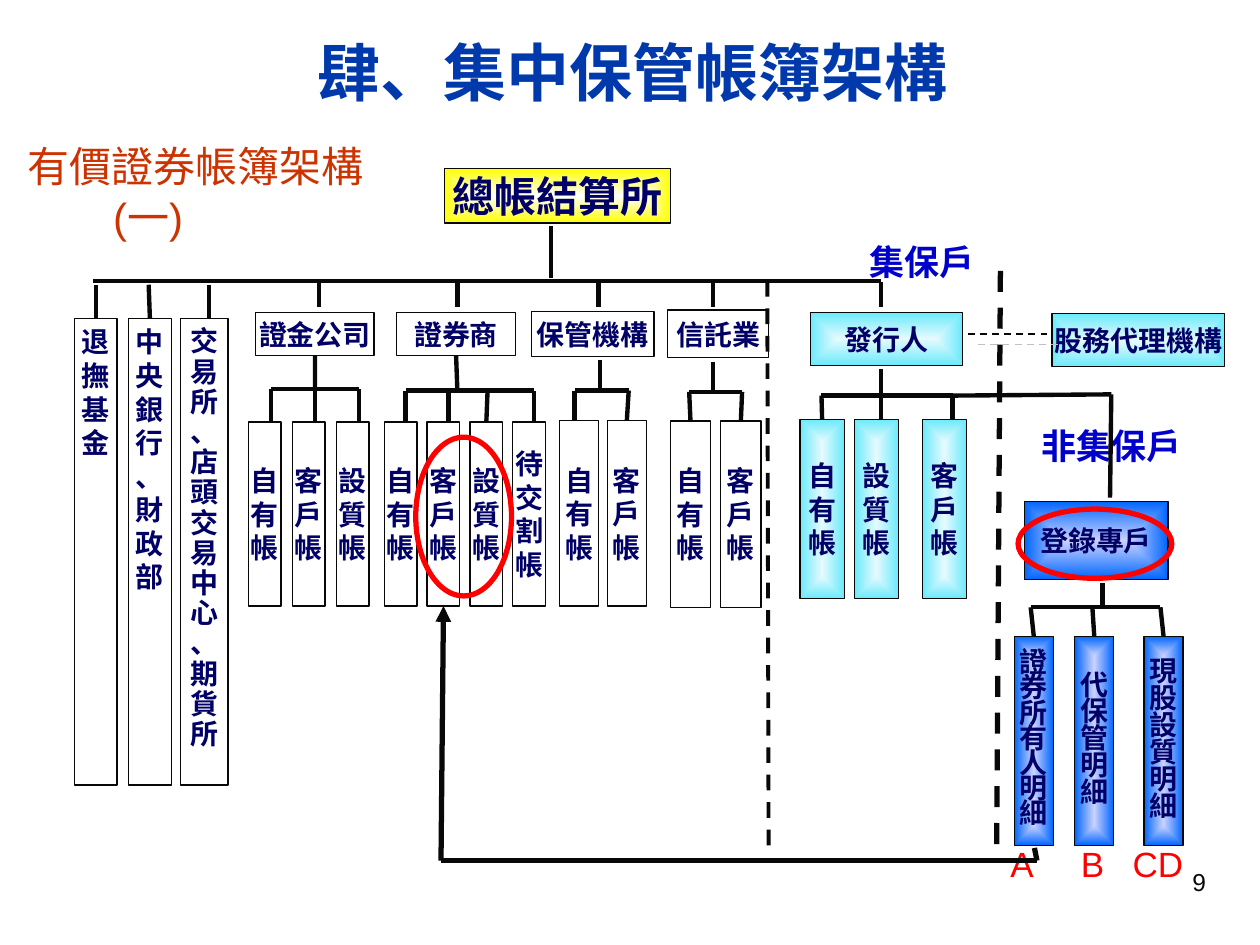
"""Build the central custody account structure slide."""
from dataclasses import dataclass

from lxml import etree
from pptx import Presentation
from pptx import util as u
from pptx.dml.color import RGBColor
from pptx.enum import dml, shapes, text
from pptx.oxml import parse_xml
from pptx.oxml.ns import nsdecls, qn


@dataclass(frozen=True)
class Theme:
    """Colours, fonts and type sizes of the slide."""
    ink: str = "080808"
    navy: str = "000066"
    blue: str = "0000CC"
    title: str = "0039AC"
    rust: str = "CC3300"
    red: str = "FF0000"
    gold: tuple = ("FFFFFF", "FFFF00")
    aqua: tuple = ("E5FAFE", "6BEAFB")
    deep: tuple = ("CAD2FF", "0066FF")
    sans: str = "Arial"
    serif: str = "Times New Roman"
    cjk: str = "Noto Sans CJK SC"
    small: int = 14
    body: int = 16
    label: int = 20
    head: int = 24
    top: int = 36


T = Theme()


def rgb(code):
    """Turn a hex code into a colour."""
    return RGBColor.from_string(code)


def style(para, size, color, font, bold=False, align=text.PP_ALIGN.CENTER):
    """Set the font and alignment of a paragraph."""
    para.alignment = align
    para.font.size, para.font.name, para.font.bold = u.Pt(size), font, bold
    para.font.color.rgb = rgb(color)


def glow(shape, pair):
    """Fill a shape with a gradient from its centre to its edges."""
    shape.fill.gradient()
    for stop, code in zip(shape.fill.gradient_stops, pair):
        stop.color.rgb = rgb(code)
    grad = shape._element.spPr.find(qn("a:gradFill"))
    grad.remove(grad.find(qn("a:lin")))
    grad.append(parse_xml(
        f'<a:path {nsdecls("a")} path="shape">'
        '<a:fillToRect l="50000" t="50000" r="50000" b="50000"/></a:path>'))


def outline(slide, kind, area, color, weight):
    """Add an unfilled preset shape."""
    shape = slide.shapes.add_shape(kind, *map(u.Inches, area))
    shape.shadow.inherit = False
    shape.fill.background()
    shape.line.color.rgb, shape.line.width = rgb(color), u.Pt(weight)
    return shape


def box(slide, lines, area, fill=None, size=T.body, space=None,
        anchor=text.MSO_ANCHOR.MIDDLE, foot=0.05):
    """Add a framed box with one paragraph for each line."""
    shape = outline(slide, shapes.MSO_SHAPE.RECTANGLE, area, T.ink, 0.75)
    if fill:
        glow(shape, fill)
    frame = shape.text_frame
    frame.word_wrap, frame.vertical_anchor = False, anchor
    frame.margin_left = frame.margin_right = 0
    frame.margin_bottom = u.Inches(foot)
    frame.text = "\n".join(lines)
    for para in frame.paragraphs:
        style(para, size, T.navy, T.cjk, True)
        para.line_spacing = space
    return shape


def note(slide, words, area, *look, **more):
    """Add a free text box and return its paragraph."""
    frame = slide.shapes.add_textbox(*map(u.Inches, area)).text_frame
    frame.word_wrap, frame.text = True, words
    style(frame.paragraphs[0], *look, **more)
    return frame.paragraphs[0]


def sites(shape):
    """List the middles of a box's sides: top, left, bottom, right."""
    x, y, w, h = shape.left, shape.top, shape.width, shape.height
    return [(x + w // 2, y), (x, y + h // 2), (x + w // 2, y + h), (x + w, y + h // 2)]


def wire(slide, start, end, weight=2.5, dash=False, boxes=()):
    """Draw a line and join its ends to the box sides they meet."""
    line = slide.shapes.add_connector(
        shapes.MSO_CONNECTOR.STRAIGHT, *map(u.Inches, (*start, *end)))
    line.line.color.rgb, line.line.width = rgb(T.ink), u.Pt(weight)
    if dash:
        line.line.dash_style = dml.MSO_LINE.DASH
    etree.SubElement(line._element.spPr, qn("a:effectLst"))
    for point, join in ((start, line.begin_connect), (end, line.end_connect)):
        for shape in boxes:
            for index, site in enumerate(sites(shape)):
                if all(abs(u.Inches(p) - s) <= u.Inches(0.03) for p, s in zip(point, site)):
                    join(shape, index)
    return line


def branch(slide, name, area, stem, bus, lefts, drops, size, kids, fill=None, spaces=None):
    """Draw a parent box, its bus and its upright child boxes."""
    top, width, height = size
    base = area[1] + area[3] + 0.03
    head = box(slide, [name], area, fill)
    wire(slide, (stem, base), (stem, bus), boxes=[head])
    wire(slide, (drops[0], bus), (drops[-1], bus))
    made = []
    for left, drop, kid, space in zip(lefts, drops, kids, spaces or [None] * len(kids)):
        made.append(box(slide, kid, (left, top, width, height), fill, space=space))
        wire(slide, (drop, bus), (drop, top), boxes=made)
    return made


def row(left, step, count):
    """Give evenly spaced left edges."""
    return [left + step * i for i in range(count)]


def trunk(slide):
    """Draw the root box, the main bus and its stubs."""
    box(slide, ["總帳結算所"], (3.53, 1.34, 1.79, 0.43), T.gold, T.head)
    wire(slide, (4.37, 1.79), (4.37, 2.21), 2.25)
    wire(slide, (0.74, 2.23), (6.99, 2.23))
    for x in (2.53, 3.63, 4.75, 5.66, 6.99):
        wire(slide, (x, 2.24), (x, 2.44))
    high = text.MSO_ANCHOR.TOP
    for words, left, width, drop, more in (
            ("退撫基金", 0.59, 0.34, 0.76, {"anchor": high}),
            ("中央銀行、財政部", 1.02, 0.34, 1.18, {"anchor": high}),
            ("交易所、店頭交易中心、期貨所", 1.43, 0.38, 1.66, {"space": 0.9, "foot": 0.25})):
        shape = box(slide, words, (left, 2.53, width, 3.7), **more)
        wire(slide, (drop, 2.26), (drop, 2.53), boxes=[shape])


def groups(slide):
    """Draw every account holder with its accounts."""
    own, client, pledge = "自有帳", "客戶帳", "設質帳"
    branch(slide, "證金公司", (2.03, 2.48, 0.94, 0.34), 2.5, 3.09, row(1.97, 0.35, 3),
           (2.15, 2.5, 2.85), (3.35, 0.26, 1.46), (own, client, pledge))
    broker = branch(slide, "證券商", (3.15, 2.48, 0.94, 0.34), 3.63, 3.1, row(3.05, 0.34, 4),
                    (3.22, 3.56, 3.87, 4.24), (3.35, 0.26, 1.46),
                    (own, client, pledge, "待交割帳"))
    branch(slide, "保管機構", (4.22, 2.47, 0.97, 0.36), 4.76, 3.1, row(4.44, 0.38, 2),
           (4.56, 4.99), (3.34, 0.31, 1.47), (own, client))
    branch(slide, "信託業", (5.3, 2.46, 0.8, 0.38), 5.66, 3.11, row(5.32, 0.4, 2),
           (5.47, 5.89), (3.34, 0.32, 1.48), (own, client))
    branch(slide, "發行人", (6.43, 2.48, 1.21, 0.42), 6.99, 3.14, (6.35, 6.78, 7.32),
           (6.52, 6.99, 7.56), (3.33, 0.35, 1.42), (own, pledge, client), T.aqua)
    branch(slide, "登錄專戶", (8.13, 3.98, 1.14, 0.62), 8.75, 4.82, (8.05, 8.53, 9.08),
           (8.18, 8.67, 9.21), (5.05, 0.31, 1.66),
           ("證券所有人明細", "代保管明細", "現股設質明細"), T.deep, (0.75, 0.8, 0.8))
    return broker[1]


def links(slide, client):
    """Draw the dividers, the agent link, the return arrow and the rings."""
    wire(slide, (7.56, 3.14), (8.82, 3.13))
    wire(slide, (8.82, 3.13), (8.81, 3.95))
    wire(slide, (6.09, 2.23), (6.1, 6.74), 2.25, True)
    wire(slide, (7.94, 2.15), (7.91, 6.74), 3, True)
    box(slide, ["股務代理機構"], (8.35, 2.49, 1.37, 0.42), T.aqua)
    agent = wire(slide, (7.68, 2.65), (8.31, 2.65), 1, True)
    agent._element.spPr.find(qn("a:effectLst")).append(parse_xml(
        f'<a:outerShdw {nsdecls("a")} dist="107950" dir="2700000">'
        '<a:srgbClr val="C0C0C0"/></a:outerShdw>'))
    wire(slide, (8.21, 6.73), (8.23, 6.83), 3)
    wire(slide, (3.5, 6.83), (8.23, 6.83), 3)
    arrow = wire(slide, (3.5, 4.82), (3.5, 6.83), 3, boxes=[client])
    etree.SubElement(arrow.line._get_or_add_ln(), qn("a:headEnd"), type="triangle")
    for area in ((8.08, 4.04, 1.22, 0.55), (3.3, 3.47, 0.76, 1.26)):
        outline(slide, shapes.MSO_SHAPE.OVAL, area, T.red, 3)


def words(slide):
    """Write the title, the subtitle and the labels."""
    head = slide.shapes.title
    head.left, head.top, head.width, head.height = map(u.Inches, (0.35, 0.13, 9.34, 0.87))
    head.text_frame.text = "肆、集中保管帳簿架構"
    head.text_frame.vertical_anchor = text.MSO_ANCHOR.MIDDLE
    style(head.text_frame.paragraphs[0], T.top, T.title, T.sans, True)
    left = text.PP_ALIGN.LEFT
    sub = note(slide, "有價證券帳簿架構\v(一)", (0.12, 1.07, 3.54, 0.86), T.head, T.rust, T.sans, align=left)
    sub._p.get_or_add_pPr().set("marL", str(u.Inches(0.68)))
    sub._p.get_or_add_pPr().set("indent", str(-u.Inches(0.68)))
    note(slide, "集保戶", (6.71, 1.86, 1.21, 0.43), T.label, T.blue, T.serif, True)
    note(slide, "非集保戶", (8.08, 3.32, 1.49, 0.43), T.label, T.blue, T.serif, True)
    keys = note(slide, "A\tB\tCD", (7.92, 6.64, 1.91, 0.43), T.label, T.red, T.sans, align=left)
    tabs = etree.Element(qn("a:tabLst"))
    for stop in (0.56, 0.97):
        etree.SubElement(tabs, qn("a:tab"), pos=str(u.Inches(stop)), algn="l")
    keys._p.get_or_add_pPr().insert(0, tabs)
    note(slide, "9", (7.17, 6.83, 2.5, 0.52), T.small, T.ink, T.sans, align=text.PP_ALIGN.RIGHT)


def main():
    """Build and save the slide."""
    deck = Presentation()
    deck.slide_width, deck.slide_height = u.Inches(10), u.Inches(7.5)
    slide = deck.slides.add_slide(deck.slide_layouts[5])
    trunk(slide)
    client = groups(slide)
    words(slide)
    links(slide, client)
    deck.save("out.pptx")


if __name__ == "__main__":
    main()
